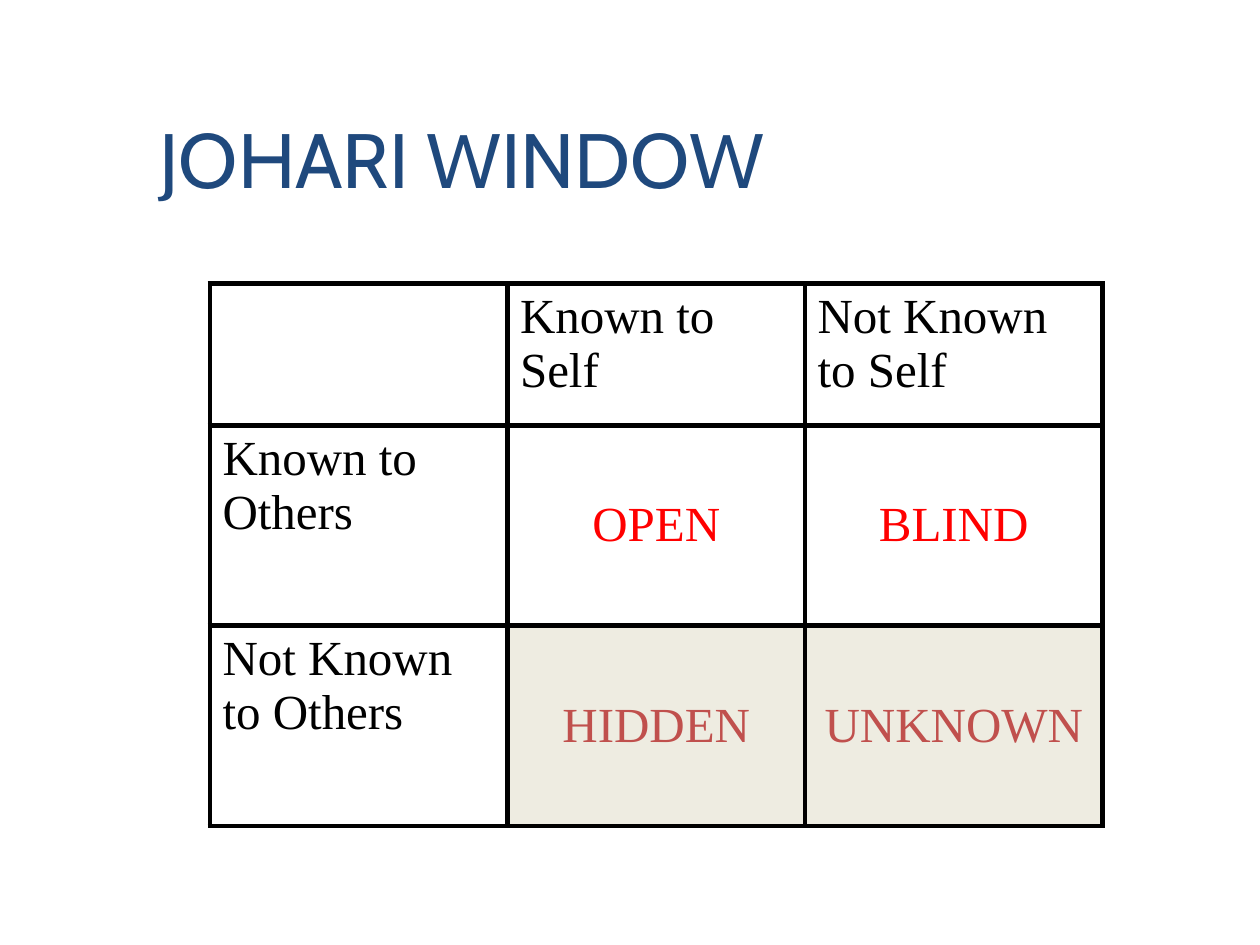
import pptx
import pptx.util
import pptx.dml.color
import pptx.enum.text
import lxml.etree

Pt = pptx.util.Pt
ALIGN = pptx.enum.text.PP_ALIGN
ANCHOR = pptx.enum.text.MSO_ANCHOR

COLORS = {
    "title": "1F497D",
    "text": "000000",
    "seen": "FF0000",
    "unseen": "C0504D",
    "shade": "EEECE1",
    "border": "000000",
}
ROWS = [
    ["", "Known to Self", "Not Known to Self"],
    ["Known to Others", "OPEN", "BLIND"],
    ["Not Known to Others", "HIDDEN", "UNKNOWN"],
]
HEIGHTS = [81, 114.5, 114.5]


def rgb(name):
    return pptx.dml.color.RGBColor.from_string(COLORS[name])


def style(para, font, size, color):
    for run in para.runs:
        run.font.name = font
        run.font.size = Pt(size)
        run.font.color.rgb = rgb(color)


def add_title(slide, left, top, width, height):
    box = slide.shapes.add_textbox(Pt(left), Pt(top), Pt(width), Pt(height))
    frame = box.text_frame
    frame.word_wrap = True
    frame.vertical_anchor = ANCHOR.BOTTOM
    frame.text = "JOHARI WINDOW"
    style(frame.paragraphs[0], "Cabin", 44, "title")


def add_border(cell, width):
    """Draw all four sides; the lines must come before the cell's fill."""
    props = cell._tc.get_or_add_tcPr()
    space = "{" + props.nsmap["a"] + "}"
    for place, side in enumerate(("lnL", "lnR", "lnT", "lnB")):
        line = lxml.etree.Element(space + side, w=str(Pt(width)))
        fill = lxml.etree.SubElement(line, space + "solidFill")
        lxml.etree.SubElement(fill, space + "srgbClr", val=COLORS["border"])
        props.insert(place, line)


def fill_cell(cell, text, row, col):
    pane = row > 0 and col > 0
    shaded = pane and row == 2
    if shaded:
        cell.fill.solid()
        cell.fill.fore_color.rgb = rgb("shade")
    else:
        cell.fill.background()
    add_border(cell, 3)
    cell.text_frame.text = text
    para = cell.text_frame.paragraphs[0]
    color = "text"
    if pane:
        cell.vertical_anchor = ANCHOR.MIDDLE
        para.alignment = ALIGN.CENTER
        color = "unseen" if shaded else "seen"
    style(para, "Times New Roman", 28, color)


def add_window(slide, left, top, width):
    count = len(ROWS[0])
    frame = slide.shapes.add_table(
        len(ROWS), count, Pt(left), Pt(top), Pt(width), Pt(sum(HEIGHTS)))
    table = frame.table
    table.first_row = False
    table.horz_banding = False
    for column in table.columns:
        column.width = Pt(width / count)
    for row, texts in enumerate(ROWS):
        table.rows[row].height = Pt(HEIGHTS[row])
        for col, text in enumerate(texts):
            fill_cell(table.cell(row, col), text, row, col)


def main():
    deck = pptx.Presentation()
    deck.slide_width, deck.slide_height = Pt(720), Pt(540)
    slide = deck.slides.add_slide(deck.slide_layouts[6])
    add_title(slide, 84, 30, 612, 90)
    add_window(slide, 120, 162, 510)
    deck.save("out.pptx")


if __name__ == "__main__":
    main()
